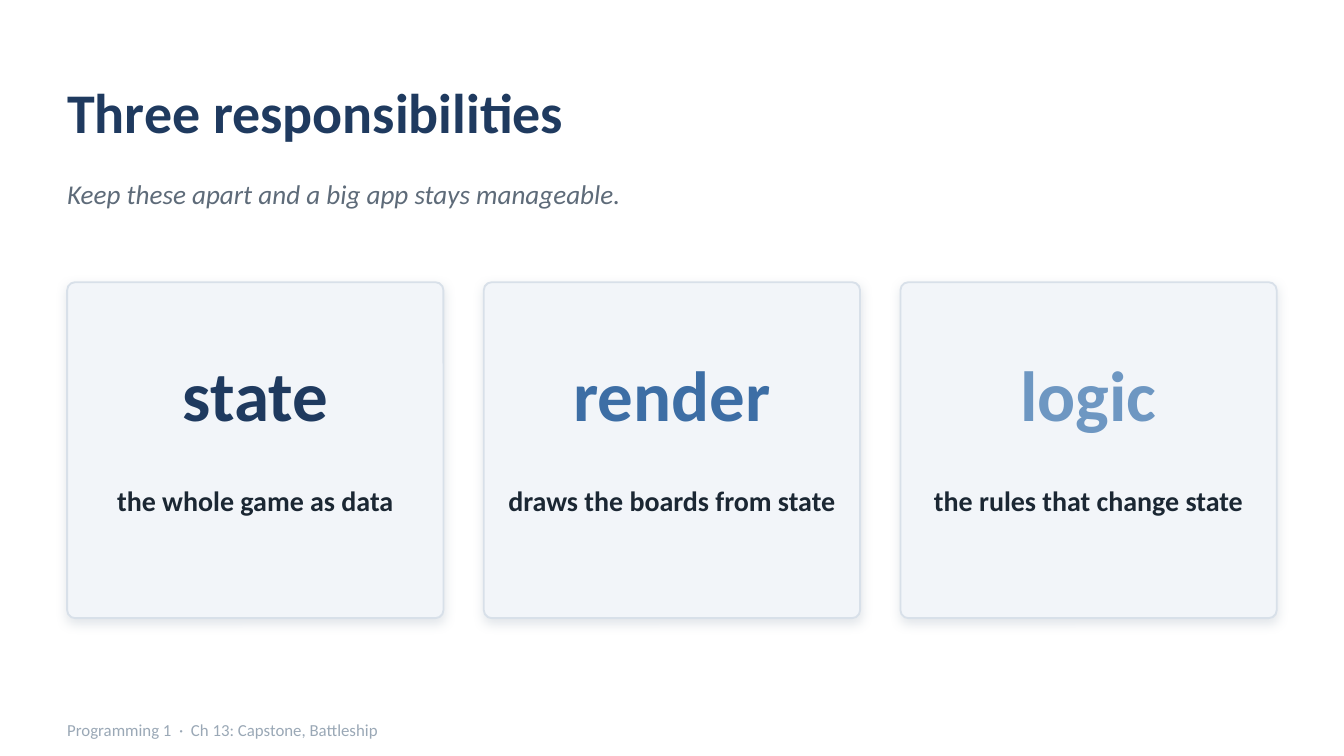
from lxml.etree import SubElement
from pptx import Presentation
from pptx.dml.color import RGBColor
from pptx.enum.shapes import MSO_SHAPE as Preset
from pptx.enum.text import MSO_ANCHOR as Anchor, PP_ALIGN as Align
from pptx.oxml.ns import qn
from pptx.util import Inches, Pt


def color(value):
    return RGBColor.from_string(value)


def add_text(text, left, top, width, height, size, text_color, bold=False,
             italic=False, align=Align.LEFT, anchor=Anchor.MIDDLE):
    box = slide.shapes.add_textbox(Inches(left), Inches(top), Inches(width), Inches(height))
    frame = box.text_frame
    frame.word_wrap = True
    frame.vertical_anchor = anchor
    frame.margin_left = frame.margin_right = frame.margin_top = frame.margin_bottom = 0
    frame.text = text
    paragraph = frame.paragraphs[0]
    paragraph.alignment = align
    font = paragraph.runs[0].font
    font.name = "Calibri"
    font.size = Pt(size)
    font.bold = bold
    font.italic = italic
    font.color.rgb = color(text_color)


NAVY = "1F3A5F"
GRAY = "9AA8B6"
MARGIN = 0.5
CARD_TOP, CARD_WIDTH, CARD_HEIGHT, CARD_GAP = 2.1, 2.8, 2.5, 0.3

presentation = Presentation()
presentation.slide_width = Inches(10)
presentation.slide_height = Inches(10 * 9 / 16)
slide = presentation.slides.add_slide(presentation.slide_layouts[6])
slide.background.fill.solid()
slide.background.fill.fore_color.rgb = color("FFFFFF")

add_text("Three responsibilities", MARGIN, 0.4, 9, 0.85, 30, NAVY, bold=True)
add_text("Keep these apart and a big app stays manageable.",
         MARGIN, 1.24, 9, 0.4, 14.5, "5E6B79", italic=True)

cards = [
    ("state", "the whole game as data", NAVY),
    ("render", "draws the boards from state", "3D6EA5"),
    ("logic", "the rules that change state", "6E97C2"),
]
for index, (name, description, name_color) in enumerate(cards):
    left = MARGIN + index * (CARD_WIDTH + CARD_GAP)
    card = slide.shapes.add_shape(Preset.ROUNDED_RECTANGLE, Inches(left), Inches(CARD_TOP),
                                  Inches(CARD_WIDTH), Inches(CARD_HEIGHT))
    card.adjustments[0] = 0.024
    card.fill.solid()
    card.fill.fore_color.rgb = color("F2F5F9")
    card.line.color.rgb = color("D8E0E9")
    card.line.width = Pt(1)
    card.shadow.inherit = False
    effects = card._element.spPr.find(qn("a:effectLst"))
    shadow = SubElement(effects, qn("a:outerShdw"), blurRad=str(Pt(6)), dist=str(Pt(2)),
                        dir="5400000", algn="bl", rotWithShape="0")
    shadow_color = SubElement(shadow, qn("a:srgbClr"), val=GRAY)
    SubElement(shadow_color, qn("a:alpha"), val="28000")

    add_text(name, left + 0.1, 2.45, CARD_WIDTH - 0.2, 0.95, 38, name_color,
             bold=True, align=Align.CENTER)
    add_text(description, left + 0.15, 3.6, CARD_WIDTH - 0.3, 0.8, 15, "1B2733",
             bold=True, align=Align.CENTER, anchor=Anchor.TOP)

add_text("Programming 1  ·  Ch 13: Capstone, Battleship", MARGIN, 5.3, 8, 0.26, 9, GRAY)

presentation.save("out.pptx")
